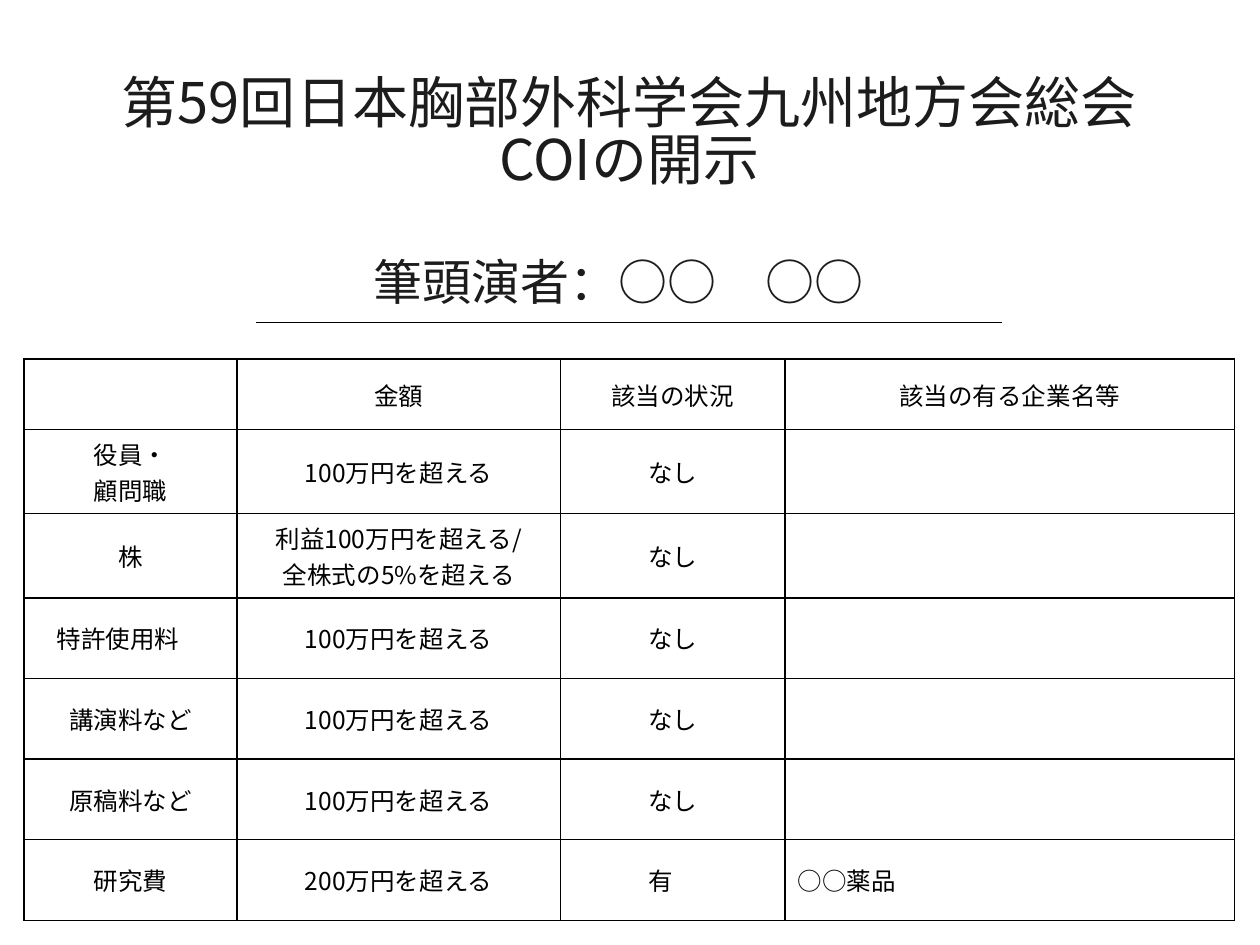
from typing import NamedTuple

import pptx
import pptx.dml.color
import pptx.enum.shapes
import pptx.enum.text
import pptx.oxml
import pptx.oxml.ns
import pptx.util
from pptx.util import Inches

RGBColor = pptx.dml.color.RGBColor
Align = pptx.enum.text.PP_ALIGN
Anchor = pptx.enum.text.MSO_ANCHOR

BLACK = RGBColor(0x00, 0x00, 0x00)
CHARCOAL = RGBColor(0x1C, 0x1C, 0x1C)
FONT = "Noto Sans CJK JP"
HEADING_SPACING = 0.84


class Heading(NamedTuple):
    left: float
    top: float
    width: float
    height: float
    lines: tuple[str, ...]
    size: int
    align: Align


class Disclosure(NamedTuple):
    item: str
    amount: str
    status: str
    company: str = ""


HEADINGS = [
    Heading(0.49, 0.48, 9.01, 1.18,
            ("第59回日本胸部外科学会九州地方会総会", "COIの開示"), 32, Align.CENTER),
    Heading(2.87, 1.98, 5.94, 0.57, ("筆頭演者：○○　○○",), 28, Align.LEFT),
]
OVER_MILLION = "100万円を超える"
DISCLOSURES = [
    Disclosure("", "金額", "該当の状況", "該当の有る企業名等"),
    Disclosure("役員・\n顧問職", OVER_MILLION, "なし"),
    Disclosure("株", "利益100万円を超える/\n全株式の5%を超える", "なし"),
    Disclosure("特許使用料　", OVER_MILLION, "なし"),
    Disclosure("講演料など", OVER_MILLION, "なし"),
    Disclosure("原稿料など", OVER_MILLION, "なし"),
    Disclosure("研究費", "200万円を超える", "有　", "○○薬品"),
]
COLUMN_WIDTHS = [1.69, 2.57, 1.78, 3.57]
ROW_HEIGHTS = [0.56, 0.65] + [0.64] * 5


def add_span(para, text: str, size: int, color: RGBColor) -> None:
    span = para.add_run()
    span.text = text
    span.font.size = pptx.util.Pt(size)
    span.font.name = FONT
    span.font.color.rgb = color
    east_asian = pptx.oxml.parse_xml(
        f'<a:ea {pptx.oxml.ns.nsdecls("a")} typeface="{FONT}"/>')
    span.font._element.append(east_asian)


def add_heading(page, heading: Heading) -> None:
    box = page.shapes.add_textbox(Inches(heading.left), Inches(heading.top),
                                  Inches(heading.width), Inches(heading.height))
    frame = box.text_frame
    frame.word_wrap = True
    frame.auto_size = pptx.enum.text.MSO_AUTO_SIZE.SHAPE_TO_FIT_TEXT
    frame.vertical_anchor = Anchor.MIDDLE
    for index, line in enumerate(heading.lines):
        para = frame.add_paragraph() if index else frame.paragraphs[0]
        para.alignment = heading.align
        para.line_spacing = HEADING_SPACING
        add_span(para, line, heading.size, CHARCOAL)


def add_rule(page, left: float, right: float, top: float) -> None:
    rule = page.shapes.add_connector(pptx.enum.shapes.MSO_CONNECTOR.STRAIGHT,
                                     Inches(left), Inches(top), Inches(right), Inches(top))
    rule.line.color.rgb = BLACK
    rule.line.width = pptx.util.Pt(1)
    rule._element.spPr.append(
        pptx.oxml.parse_xml(f'<a:effectLst {pptx.oxml.ns.nsdecls("a")}/>'))


def set_borders(cell) -> None:
    """Outline all four sides; borders must precede the fill in the cell XML."""
    properties = cell._tc.get_or_add_tcPr()
    for position, side in enumerate(("lnL", "lnR", "lnT", "lnB")):
        properties.insert(position, pptx.oxml.parse_xml(
            f'<a:{side} {pptx.oxml.ns.nsdecls("a")} w="{pptx.util.Pt(1)}">'
            f'<a:solidFill><a:srgbClr val="{BLACK}"/></a:solidFill></a:{side}>'))


def fill_cell(cell, text: str, align: Align) -> None:
    cell.fill.background()
    set_borders(cell)
    cell.vertical_anchor = Anchor.MIDDLE
    if not text:
        return
    para = cell.text_frame.paragraphs[0]
    para.alignment = align
    for index, line in enumerate(text.split("\n")):
        if index:
            para.add_line_break()
        add_span(para, line, 14, BLACK)


def add_disclosure_table(page) -> None:
    table = page.shapes.add_table(
        len(DISCLOSURES), len(COLUMN_WIDTHS), Inches(0.19), Inches(2.85),
        Inches(sum(COLUMN_WIDTHS)), Inches(sum(ROW_HEIGHTS))).table
    table.first_row = False
    table.horz_banding = False
    for column, width in zip(table.columns, COLUMN_WIDTHS):
        column.width = Inches(width)
    for row_index, (row, height, disclosure) in enumerate(
            zip(table.rows, ROW_HEIGHTS, DISCLOSURES)):
        row.height = Inches(height)
        for column_index, text in enumerate(disclosure):
            is_company = row_index > 0 and column_index == 3
            fill_cell(row.cells[column_index], text,
                      Align.LEFT if is_company else Align.CENTER)


def main() -> None:
    deck = pptx.Presentation()
    deck.slide_width, deck.slide_height = Inches(10), Inches(7.5)
    page = deck.slides.add_slide(deck.slide_layouts[6])
    add_disclosure_table(page)
    add_rule(page, 2.03, 7.95, 2.56)
    for heading in HEADINGS:
        add_heading(page, heading)
    deck.save("out.pptx")


if __name__ == "__main__":
    main()
